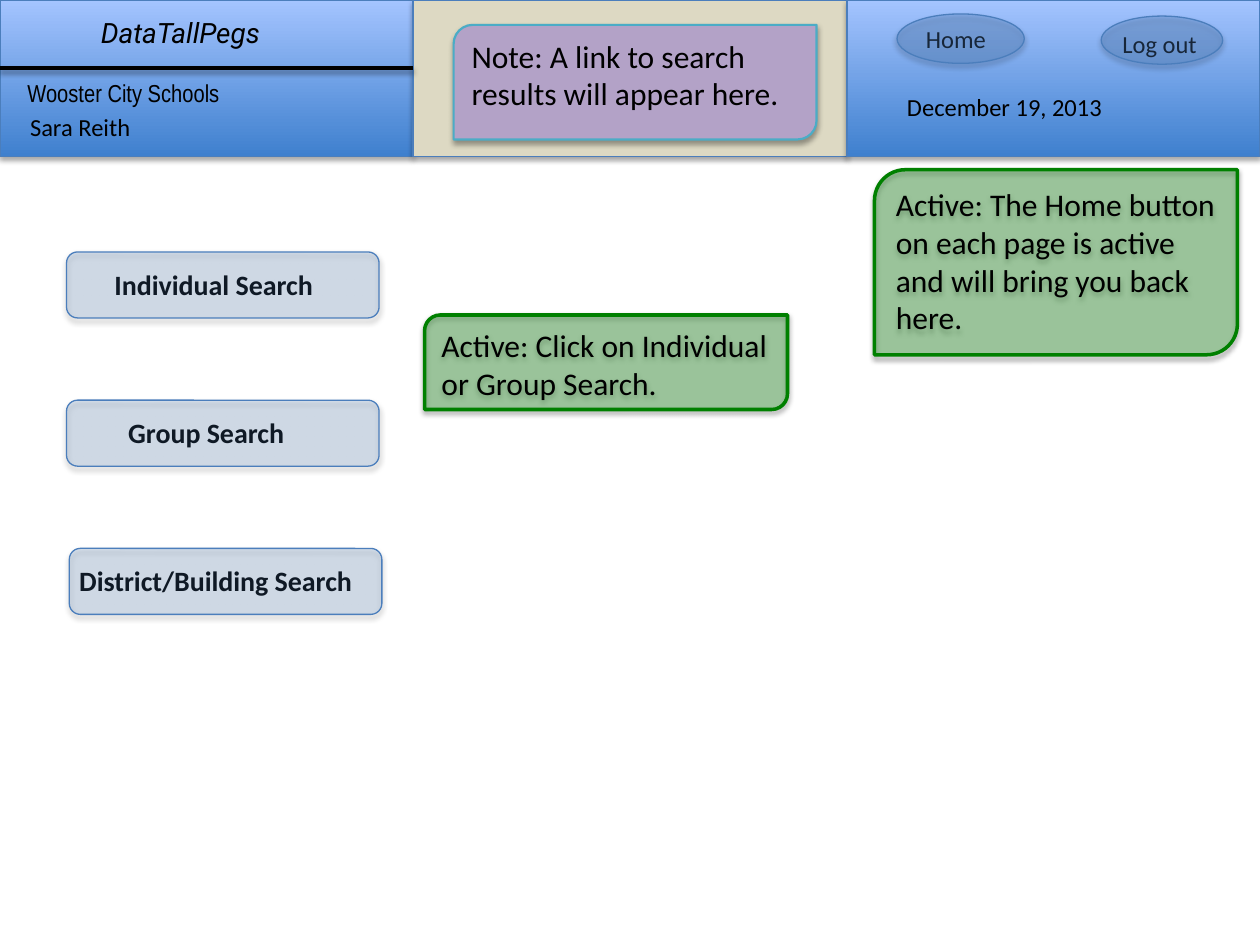
from pptx import Presentation
from pptx.dml.color import RGBColor
from pptx.enum.shapes import MSO_CONNECTOR, MSO_SHAPE
from pptx.enum.text import MSO_ANCHOR, MSO_AUTO_SIZE, PP_ALIGN
from pptx.oxml import parse_xml
from pptx.oxml.ns import nsdecls, qn
from pptx.util import Pt

RECTANGLE = MSO_SHAPE.RECTANGLE
ELLIPSE = MSO_SHAPE.OVAL
ROUNDED = MSO_SHAPE.ROUNDED_RECTANGLE
NOTE = MSO_SHAPE.ROUND_2_DIAG_RECTANGLE
STRAIGHT = MSO_CONNECTOR.STRAIGHT
LEFT = PP_ALIGN.LEFT
TOP = MSO_ANCHOR.TOP
FIT_SHAPE = MSO_AUTO_SIZE.SHAPE_TO_FIT_TEXT

COLORS = {
    "text": "000000", "header_dark": "3F80CE", "header_light": "A4C4FF",
    "outline": "4B7EBC", "sand": "DDD9C3", "button": "4F81BD",
    "purple": "B3A2C7", "aqua": "4BACC6", "green": "008000",
}

HEADER_HEIGHT = 89.3
SIDE_WIDTH = 236
SLIDE_WIDTH, SLIDE_HEIGHT = 720, 540
APP_NAME = ("DataTallPegs", (50.4, 5, 136, 26.6))
HEADER_TEXTS = [
    ("Sara Reith", (10.1, 60.5, 98.6, 24.2), "Calibri"),
    ("December 19, 2013", (511.2, 49, 134.6, 24.2), "Calibri"),
    ("Wooster City Schools", (8.6, 41, 136, 24.2), "Arial Narrow"),
]
HEADER_BUTTONS = [
    ("Log out", (634.3, 13, 64.8, 24.2), (629.3, 9.2, 69.4, 27.5)),
    ("Home", (522, 10.1, 56.2, 24.2), (512.6, 8, 72.7, 28.2)),
]
SEARCH_TOP, SEARCH_STEP, SEARCH_SIZE = 144, 84.7, (178.6, 37.7)
SEARCH_BUTTONS = [
    ("Individual Search", 38, 58.3, 137.5),
    ("Group Search", 38, 66.2, 121.7),
    ("District/Building Search", 39.6, 38.2, 182.2),
]
NOTES = [
    ("Note: A link to search results will appear here.",
     (259.2, 14.2, 207.4, 65.5), "purple", 100, "aqua", 1.25),
    ("Active: Click on Individual or Group Search.",
     (242.6, 180, 207.4, 54), "green", 32, "green", 2),
    ("Active: The Home button on each page is active and will bring you back here.",
     (499.7, 97, 207.4, 105.8), "green", 32, "green", 2),
]


def rgb(name):
    return RGBColor.from_string(COLORS[name])


def points(box):
    return [Pt(value) for value in box]


def add_shadow(shape, alpha=35):
    shape._element.spPr.append(parse_xml(
        f'<a:effectLst {nsdecls("a")}><a:outerShdw blurRad="{Pt(3.1)}" '
        f'dist="{Pt(1.8)}" dir="5400000" rotWithShape="0"><a:srgbClr val="000000">'
        f'<a:alpha val="{alpha * 1000}"/></a:srgbClr></a:outerShdw></a:effectLst>'))


def write(shape, text, size, font="Calibri", bold=False, italic=False):
    frame = shape.text_frame
    frame.word_wrap = True
    frame.vertical_anchor = TOP
    paragraph = frame.paragraphs[0]
    paragraph.alignment = LEFT
    run = paragraph.add_run()
    run.text = text
    run.font.name = font
    run.font.size = Pt(size)
    run.font.bold = bold
    run.font.italic = italic
    run.font.color.rgb = rgb("text")
    return paragraph


def add_label(slide, text, box, size, **style):
    label = slide.shapes.add_textbox(*points(box))
    write(label, text, size, **style)
    label.text_frame.auto_size = FIT_SHAPE


def add_panel(slide, kind, box, fill=None, alpha=100, line="outline", weight=0.75):
    panel = slide.shapes.add_shape(kind, *points(box))
    if fill:
        panel.fill.solid()
        panel.fill.fore_color.rgb = rgb(fill)
        if alpha < 100:
            color = panel._element.spPr.find(qn("a:solidFill"))[0]
            color.append(parse_xml(f'<a:alpha {nsdecls("a")} val="{alpha * 1000}"/>'))
    else:
        panel.fill.gradient()
        panel.fill.gradient_angle = 90
        for stop, name in zip(panel.fill.gradient_stops, ("header_dark", "header_light")):
            stop.color.rgb = rgb(name)
    panel.line.color.rgb = rgb(line)
    panel.line.width = Pt(weight)
    add_shadow(panel)
    return panel


def add_header(slide):
    middle_width = SLIDE_WIDTH - 2 * SIDE_WIDTH
    left = 0
    for width, fill in ((SIDE_WIDTH, None), (middle_width, "sand"), (SIDE_WIDTH, None)):
        add_panel(slide, RECTANGLE, (left, 0, width, HEADER_HEIGHT), fill)
        left += width
    for text, box, font in HEADER_TEXTS:
        add_label(slide, text, box, 14, font=font)
    for text, text_box, oval_box in HEADER_BUTTONS:
        add_label(slide, text, text_box, 14)
        add_panel(slide, ELLIPSE, oval_box, "button", 30)

    title = slide.shapes.title
    slide.shapes._spTree.append(title._element)
    title.left, title.top, title.width, title.height = points(APP_NAME[1])
    write(title, APP_NAME[0], 16, font="Roboto", italic=True)
    title.text_frame.auto_size = FIT_SHAPE

    rule = slide.shapes.add_connector(STRAIGHT, *points((0, 38.9, SIDE_WIDTH, 38.9)))
    rule.line.color.rgb = rgb("text")
    rule.line.width = Pt(2)
    add_shadow(rule, 38)


def add_search_buttons(slide):
    for index, (text, left, text_left, text_width) in enumerate(SEARCH_BUTTONS):
        top = SEARCH_TOP + index * SEARCH_STEP
        add_label(slide, text, (text_left, top + 5.2, text_width, 26.6), 16, bold=True)
        add_panel(slide, ROUNDED, (left, top, *SEARCH_SIZE), "button", 20)


def add_notes(slide):
    for text, box, fill, alpha, line, weight in NOTES:
        note = add_panel(slide, NOTE, box, fill, alpha, line, weight)
        write(note, text, 18).space_after = Pt(6)


def main():
    presentation = Presentation()
    presentation.slide_width = Pt(SLIDE_WIDTH)
    presentation.slide_height = Pt(SLIDE_HEIGHT)
    slide = presentation.slides.add_slide(presentation.slide_layouts[5])
    add_header(slide)
    add_search_buttons(slide)
    add_notes(slide)
    presentation.save("out.pptx")


if __name__ == "__main__":
    main()
